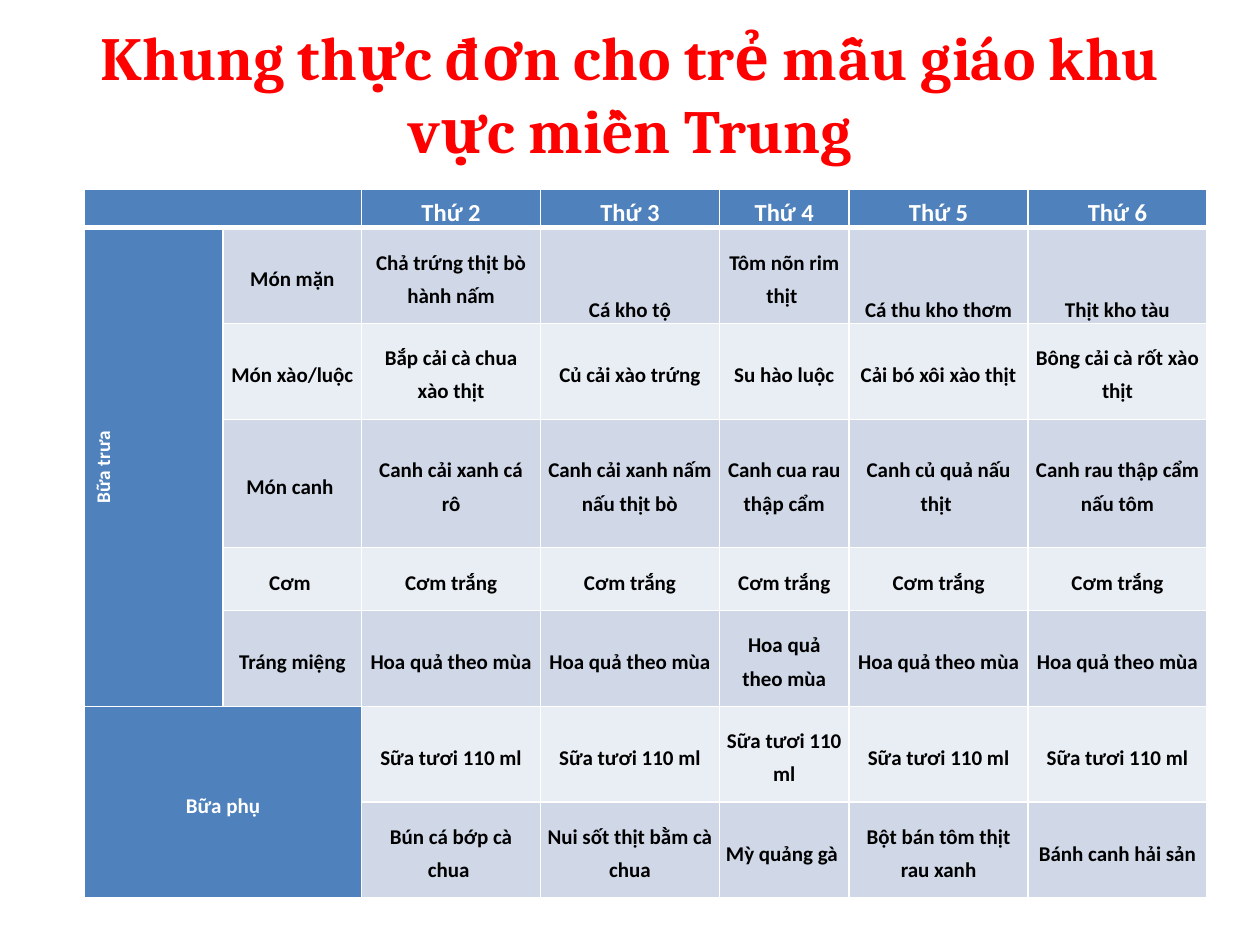
from dataclasses import dataclass

from lxml.etree import SubElement
from pptx import Presentation
from pptx.dml.color import RGBColor
from pptx.enum.text import MSO_ANCHOR, MSO_AUTO_SIZE, PP_ALIGN
from pptx.oxml.ns import qn
from pptx.util import Inches, Pt

TITLE = "Khung thực đơn cho trẻ mẫu giáo khu vực miền Trung"
FRUIT = "Hoa quả theo mùa"
RICE = "Cơm trắng"
MILK = "Sữa tươi 110 ml"
MENU = [
    ["", "", "Thứ 2", "Thứ 3", "Thứ 4", "Thứ 5", "Thứ 6"],
    ["Bữa trưa", "Món mặn", "Chả trứng thịt bò hành nấm", "Cá kho tộ",
     "Tôm nõn rim thịt ", "Cá thu kho thơm", "Thịt kho tàu"],
    ["", "Món xào/luộc", "Bắp cải cà chua xào thịt", "Củ cải xào trứng",
     "Su hào luộc", "Cải bó xôi xào thịt", "Bông cải cà rốt xào thịt"],
    ["", "Món canh ", "Canh cải xanh cá rô", "Canh cải xanh nấm nấu thịt bò",
     "Canh cua rau thập cẩm", "Canh củ quả nấu thịt ", "Canh rau thập cẩm nấu tôm"],
    ["", "Cơm "] + [RICE] * 5,
    ["", "Tráng miệng"] + [FRUIT] * 5,
    ["Bữa phụ", ""] + [MILK] * 5,
    ["", "", "Bún cá bớp cà chua ", "Nui sốt thịt bằm cà chua",
     "Mỳ quảng gà ", "Bột bán tôm thịt rau xanh", "Bánh canh hải sản"],
]
COLS = [1.1, 1.1, 1.42, 1.42, 1.03, 1.42, 1.42]
ROWS = [0.26, 0.76, 0.76, 1.02, 0.5, 0.76, 0.76, 0.76]
MERGES = [((0, 0), (0, 1)), ((1, 0), (5, 0)), ((6, 0), (7, 1))]
LUNCH = (1, 0)
LOW_CELLS = {(1, 3), (1, 5), (1, 6)}


@dataclass(frozen=True)
class Theme:
    title: str = "FF0000"
    head: str = "4F81BD"
    bands: tuple = ("E9EDF4", "D0D8E8")
    light: str = "FFFFFF"
    dark: str = "000000"
    title_font: str = "Cambria"
    body_font: str = "Calibri"
    title_size: int = 35
    head_size: int = 14
    lunch_size: int = 11
    body_size: int = 12
    gap: float = 4.8


T = Theme()


def style(font, name, size, color):
    font.name, font.size, font.bold = name, Pt(size), True
    font.color.rgb = RGBColor.from_string(color)


def add_borders(cell, is_header):
    tcPr = cell._tc.get_or_add_tcPr()
    for side in "LRTB":
        width = 3 if is_header and side == "B" else 1
        ln = SubElement(tcPr, qn(f"a:ln{side}"), w=str(Pt(width)))
        fill = SubElement(ln, qn("a:solidFill"))
        SubElement(fill, qn("a:srgbClr"), val=T.light)


def format_cell(cell, r, c, text):
    is_head = r == 0 or c == 0 or (c == 1 and r >= 6)
    add_borders(cell, r == 0)
    cell.fill.solid()
    cell.fill.fore_color.rgb = RGBColor.from_string(T.head if is_head else T.bands[r % 2])
    cell.margin_left = cell.margin_right = Inches(0.05)
    cell.margin_top = cell.margin_bottom = 0
    cell.vertical_anchor = MSO_ANCHOR.BOTTOM if (r, c) in LOW_CELLS else MSO_ANCHOR.MIDDLE
    cell.text_frame.text = text
    p = cell.text_frame.paragraphs[0]
    p.alignment = PP_ALIGN.CENTER
    p.line_spacing = 1.3
    p.space_before = p.space_after = Pt(T.gap)
    size = T.head_size if r == 0 else T.lunch_size if (r, c) == LUNCH else T.body_size
    style(p.font, T.body_font, size, T.light if is_head else T.dark)
    for run in p.runs:
        style(run.font, T.body_font, size, T.light if is_head else T.dark)


def add_title(s):
    sp = s.shapes.title
    sp.left, sp.top, sp.width, sp.height = map(Inches, (0.5, 0.3, 9, 0.87))
    tf = sp.text_frame
    tf.text = TITLE
    tf.word_wrap = True
    tf.auto_size = MSO_AUTO_SIZE.NONE
    tf.vertical_anchor = MSO_ANCHOR.MIDDLE
    p = tf.paragraphs[0]
    p.alignment = PP_ALIGN.CENTER
    style(p.runs[0].font, T.title_font, T.title_size, T.title)


def add_menu(s):
    frame = s.shapes.add_table(len(ROWS), len(COLS), Inches(0.67), Inches(1.5),
                               Inches(sum(COLS)), Inches(sum(ROWS)))
    table = frame.table
    table.horz_banding = False
    for col, width in zip(table.columns, COLS):
        col.width = Inches(width)
    for row, height in zip(table.rows, ROWS):
        row.height = Inches(height)
    for r, texts in enumerate(MENU):
        for c, text in enumerate(texts):
            format_cell(table.cell(r, c), r, c, text)
    for first, last in MERGES:
        table.cell(*first).merge(table.cell(*last))
    table.cell(*LUNCH)._tc.get_or_add_tcPr().set("vert", "vert270")


def main():
    prs = Presentation()
    prs.slide_width, prs.slide_height = Inches(10), Inches(7.5)
    s = prs.slides.add_slide(prs.slide_layouts[5])
    add_title(s)
    add_menu(s)
    prs.save("out.pptx")


if __name__ == "__main__":
    main()
